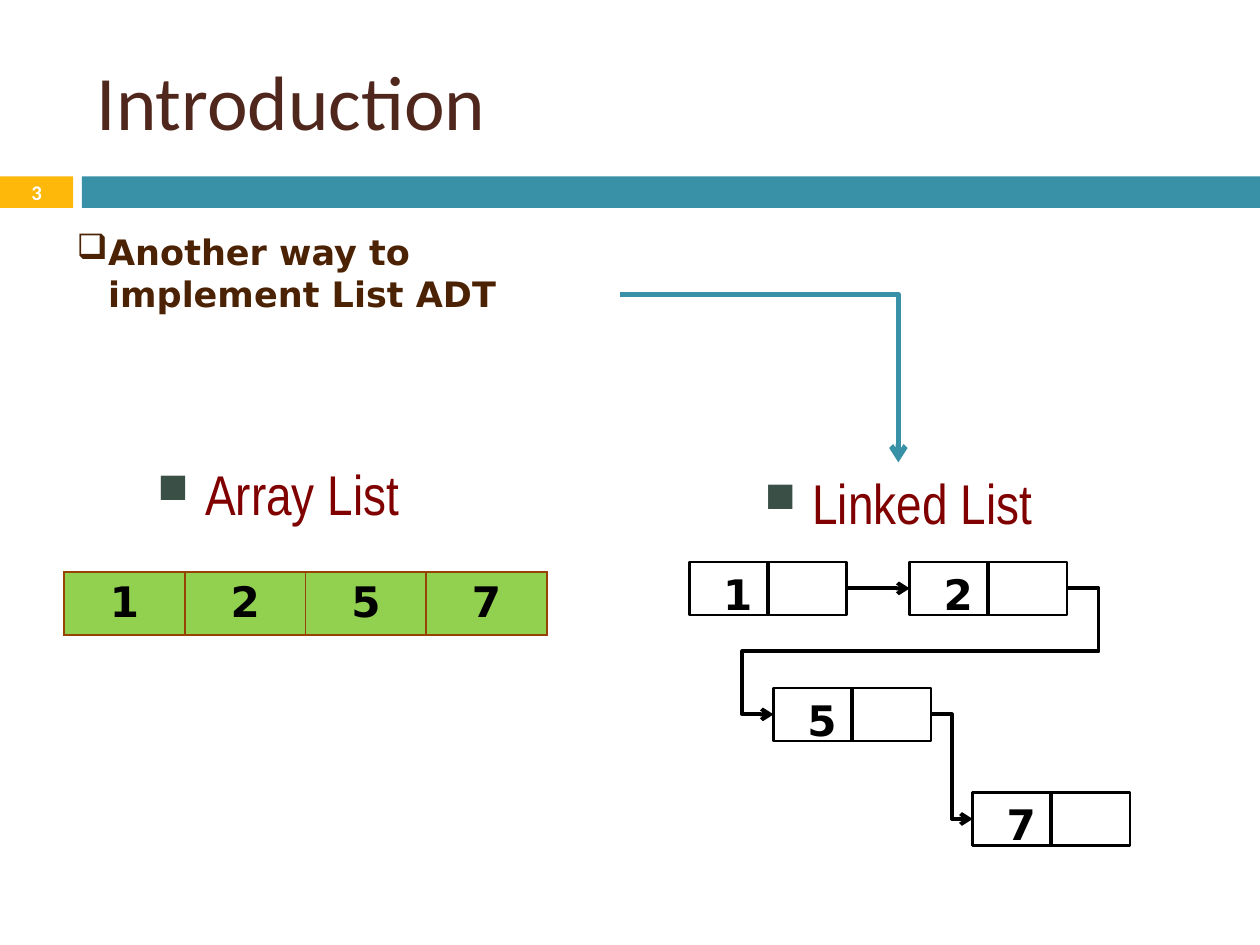
from pptx import Presentation
from pptx.dml.color import RGBColor
from pptx.enum.shapes import MSO_CONNECTOR, MSO_SHAPE
from pptx.enum.text import MSO_ANCHOR, PP_ALIGN
from pptx.oxml import parse_xml
from pptx.oxml.ns import nsdecls, qn
from pptx.util import Inches, Pt

TEAL = RGBColor(0x38, 0x91, 0xA7)
GOLD = RGBColor(0xFE, 0xB8, 0x0A)
BROWN = RGBColor(0x4F, 0x27, 0x1C)
DARK = RGBColor(0x4B, 0x22, 0x03)
RED = RGBColor(0x80, 0x00, 0x00)
SLATE = RGBColor(0x3A, 0x50, 0x47)
GREEN = RGBColor(0x92, 0xD0, 0x50)
RUST = RGBColor(0x96, 0x43, 0x05)
BLACK = RGBColor(0, 0, 0)
WHITE = RGBColor(0xFF, 0xFF, 0xFF)

deck = Presentation()
deck.slide_width, deck.slide_height = Inches(10), Inches(7.5)
slide = deck.slides.add_slide(deck.slide_layouts[6])
shapes = slide.shapes


def write(text, box=None, frame=None, size=24, font="DejaVu Sans", color=BLACK,
          bold=True, align=PP_ALIGN.LEFT, anchor=MSO_ANCHOR.TOP, wrap=True,
          mark=None, tint=None, scale=100, indent=0, before=0):
    if box:
        frame = shapes.add_textbox(*map(Inches, box)).text_frame
        frame.word_wrap = wrap
        frame.vertical_anchor = anchor
    para = frame.paragraphs[0]
    para.alignment = align
    para.space_before = Pt(before)
    run = para.add_run()
    run.text = text
    run.font.size, run.font.name, run.font.bold = Pt(size), font, bold
    run.font.color.rgb = color
    if mark:
        props = para._p.get_or_add_pPr()
        props.set("marL", str(Inches(indent)))
        props.set("indent", str(-Inches(indent)))
        ns = nsdecls("a")
        for xml in (f'<a:buClr {ns}><a:srgbClr val="{tint}"/></a:buClr>',
                    f'<a:buSzPct {ns} val="{scale * 1000}"/>',
                    f'<a:buChar {ns} char="{mark}"/>'):
            props.append(parse_xml(xml))


def link(start, end, kind="line", color=BLACK, width=2.25, arrow=True, bends=()):
    style = MSO_CONNECTOR.STRAIGHT if kind == "line" else MSO_CONNECTOR.ELBOW
    line = shapes.add_connector(style, *map(Inches, start + end))
    line.line.color.rgb = color
    line.line.width = Pt(width)
    props = line._element.spPr
    shape = props.find(qn("a:prstGeom"))
    shape.set("prst", kind)
    guides = "".join(f'<a:gd name="adj{i}" fmla="val {round(bend * 100000)}"/>'
                     for i, bend in enumerate(bends, 1))
    for old in list(shape):
        shape.remove(old)
    shape.append(parse_xml(f'<a:avLst {nsdecls("a")}>{guides}</a:avLst>'))
    if arrow:
        line.line._get_or_add_ln().append(
            parse_xml(f'<a:tailEnd {nsdecls("a")} type="arrow"/>'))
    props.append(parse_xml(f'<a:effectLst {nsdecls("a")}/>'))
    return line


for left, width, color in ((0, 0.58, GOLD), (0.65, 9.35, TEAL)):
    bar = shapes.add_shape(MSO_SHAPE.RECTANGLE, Inches(left), Inches(1.4),
                           Inches(width), Inches(0.25))
    bar.shadow.inherit = False
    bar.fill.solid()
    bar.fill.fore_color.rgb = color
    bar.line.fill.background()

write("Introduction", (0.67, 0.25, 8.92, 1.08), size=44, font="Calibri",
      color=BROWN, bold=False, anchor=MSO_ANCHOR.MIDDLE)
write("3", (0, 1.39, 0.58, 0.27), size=11.9, font="Calibri", color=WHITE,
      align=PP_ALIGN.CENTER, anchor=MSO_ANCHOR.MIDDLE)
write("Another way to implement List ADT", (0.51, 1.78, 4.41, 1.11), size=20,
      color=DARK, mark="❑", tint=DARK, indent=0.25)
for name, left, top in (("Array List", 0, 3.6), ("Linked List", 4.92, 3.67)):
    write(name, (left, top, 4.42, 0.7), size=32, font="Arial Narrow", color=RED,
          bold=False, align=PP_ALIGN.CENTER, mark="■", tint=SLATE, scale=75,
          indent=0.38, before=6.4)

items = ("1", "2", "5", "7")
table = shapes.add_table(1, len(items), Inches(0.51), Inches(4.54),
                         Inches(3.83), Inches(0.49)).table
for col, item in enumerate(items):
    cell = table.cell(0, col)
    write(item, frame=cell.text_frame, align=PP_ALIGN.CENTER)
    props = cell._tc.get_or_add_tcPr()
    for side in ("lnL", "lnR", "lnT", "lnB"):
        props.append(parse_xml(
            f'<a:{side} {nsdecls("a")} w="{Pt(1)}"><a:solidFill>'
            f'<a:srgbClr val="{RUST}"/></a:solidFill></a:{side}>'))
    cell.fill.solid()
    cell.fill.fore_color.rgb = GREEN

wide, high = 1.25, 0.42
spots = ((5.47, 4.46), (7.22, 4.46), (6.14, 5.46), (7.72, 6.29))
nodes = []
for item, (left, top) in zip(items, spots):
    node = shapes.add_shape(MSO_SHAPE.RECTANGLE, Inches(left), Inches(top),
                            Inches(wide), Inches(high))
    node.shadow.inherit = False
    node.fill.solid()
    node.fill.fore_color.rgb = WHITE
    node.line.color.rgb = BLACK
    node.line.width = Pt(1.5)
    nodes.append(node)
    mid = left + wide / 2
    split = link((mid, top), (mid, top + high), arrow=False)
    split.begin_connect(node, 0)
    split.end_connect(node, 2)
    write(item, (left + 0.17, top, 0.37, 0.5), wrap=False)

outs = [(left + wide, top + high / 2) for left, top in spots]
ins = [(left, top + high / 2) for left, top in spots]
first = link(outs[0], ins[1])
first.begin_connect(nodes[0], 3)
first.end_connect(nodes[1], 1)
link(outs[1], ins[2], "bentConnector5", bends=(-0.107, 0.5, 1.107))
link(outs[2], ins[3], "bentConnector3", bends=(0.5,))
link((4.92, 2.34), (7.13, 3.67), "bentConnector2", color=TEAL, width=3)

deck.save("out.pptx")
